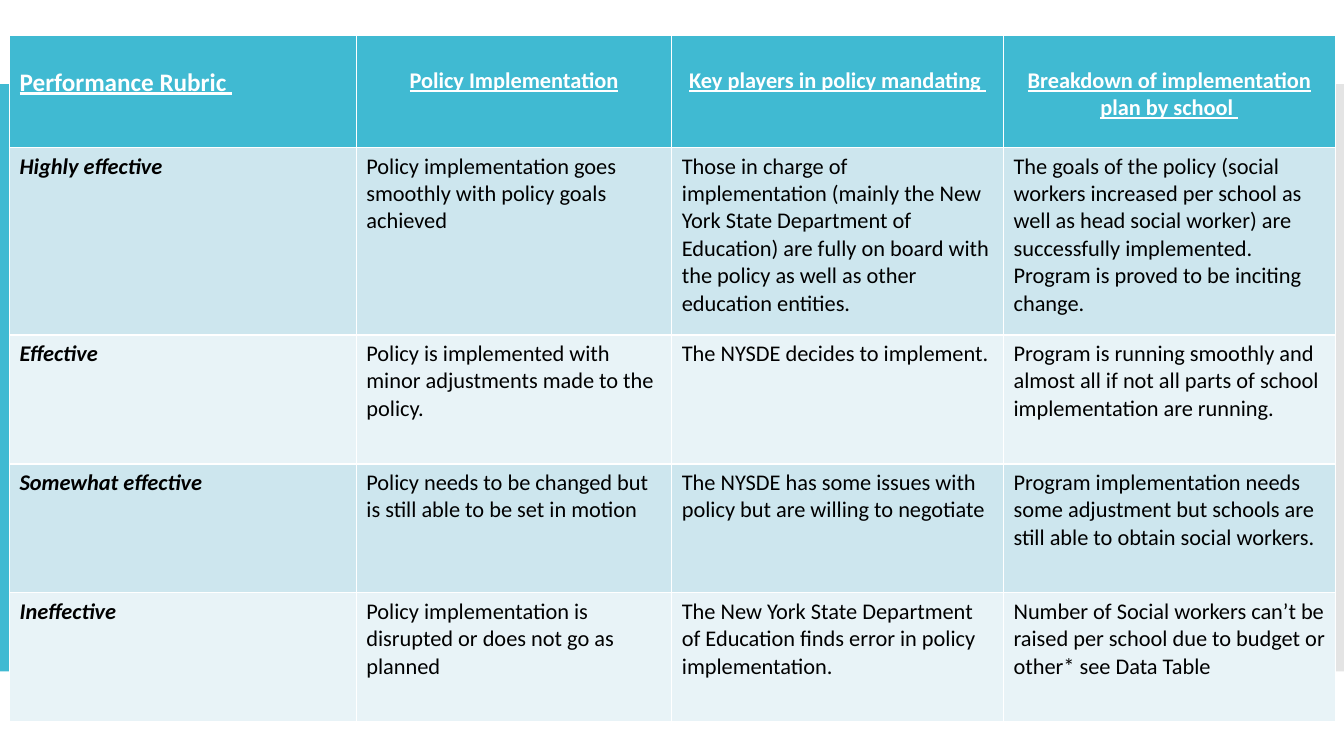
from lxml import etree
from pptx import Presentation
from pptx.dml.color import RGBColor
from pptx.enum.shapes import MSO_SHAPE
from pptx.enum.text import PP_ALIGN
from pptx.oxml.ns import qn
from pptx.util import Cm, Pt

RECTANGLE = MSO_SHAPE.RECTANGLE
LEFT, CENTER, JUSTIFY = PP_ALIGN.LEFT, PP_ALIGN.CENTER, PP_ALIGN.JUSTIFY


def paint(fill, color):
    fill.solid()
    fill.fore_color.rgb = RGBColor.from_string(color)


RUBRIC = [
    ["Performance Rubric ", "Policy Implementation", "Key players in policy mandating ",
     "Breakdown of implementation plan by school "],
    ["Highly effective",
     "Policy implementation goes smoothly with policy goals achieved",
     "Those in charge of implementation (mainly the New York State Department of Education) "
     "are fully on board with the policy as well as other education entities.",
     "The goals of the policy (social workers increased per school as well as head social worker) "
     "are successfully implemented. Program is proved to be inciting change."],
    ["Effective",
     "Policy is implemented with minor adjustments made to the policy.",
     "The NYSDE decides to implement.",
     "Program is running smoothly and almost all if not all parts of school implementation are running."],
    ["Somewhat effective",
     "Policy needs to be changed but is still able to be set in motion",
     "The NYSDE has some issues with policy but are willing to negotiate",
     "Program implementation needs some adjustment but schools are still able to obtain social workers."],
    ["Ineffective",
     "Policy implementation is disrupted or does not go as planned",
     "The New York State Department of Education finds error in policy implementation.",
     "Number of Social workers can’t be raised per school due to budget or other* see Data Table"],
]
COLUMN_WIDTHS = [8.74, 7.95, 8.36, 8.36]
ROW_HEIGHTS = [2.84, 4.72, 3.25, 3.25, 3.25]

prs = Presentation()
prs.slide_width, prs.slide_height = Cm(33.87), Cm(19.05)
slide = prs.slides.add_slide(prs.slide_layouts[6])

for left, width, color in [(0, 9.58, "40BAD2"), (32.81, 1.06, "C8C8C8")]:
    side_band = slide.shapes.add_shape(RECTANGLE, Cm(left), Cm(2.12), Cm(width), Cm(14.8))
    side_band.shadow.inherit = False
    side_band.line.fill.background()
    paint(side_band.fill, color)
band_color = side_band.fill._xPr.find(qn("a:solidFill"))[0]
etree.SubElement(band_color, qn("a:alpha"), val="49000")

rubric = slide.shapes.add_table(
    len(ROW_HEIGHTS), len(COLUMN_WIDTHS), Cm(0.24), Cm(0.88),
    Cm(sum(COLUMN_WIDTHS)), Cm(sum(ROW_HEIGHTS))).table
for column, width in zip(rubric.columns, COLUMN_WIDTHS):
    column.width = Cm(width)
for row, height in zip(rubric.rows, ROW_HEIGHTS):
    row.height = Cm(height)

for r, texts in enumerate(RUBRIC):
    header = r == 0
    for c, text in enumerate(texts):
        cell = rubric.cell(r, c)
        paint(cell.fill, "40BAD2" if header else ["E8F3F7", "CDE6EE"][r % 2])
        cell.margin_top = Cm(0.81 if header else 0.13)
        cell.text = text
        paragraph = cell.text_frame.paragraphs[0]
        paragraph.alignment = LEFT if not header else CENTER if c else JUSTIFY
        font = paragraph.font
        font.name = "Calibri"
        font.size = Pt(18 if header and c == 0 else 16)
        font.bold = header or c == 0
        font.italic = c == 0 and not header
        font.underline = header
        paint(font.fill, "FFFFFF" if header else "000000")

prs.save("out.pptx")
